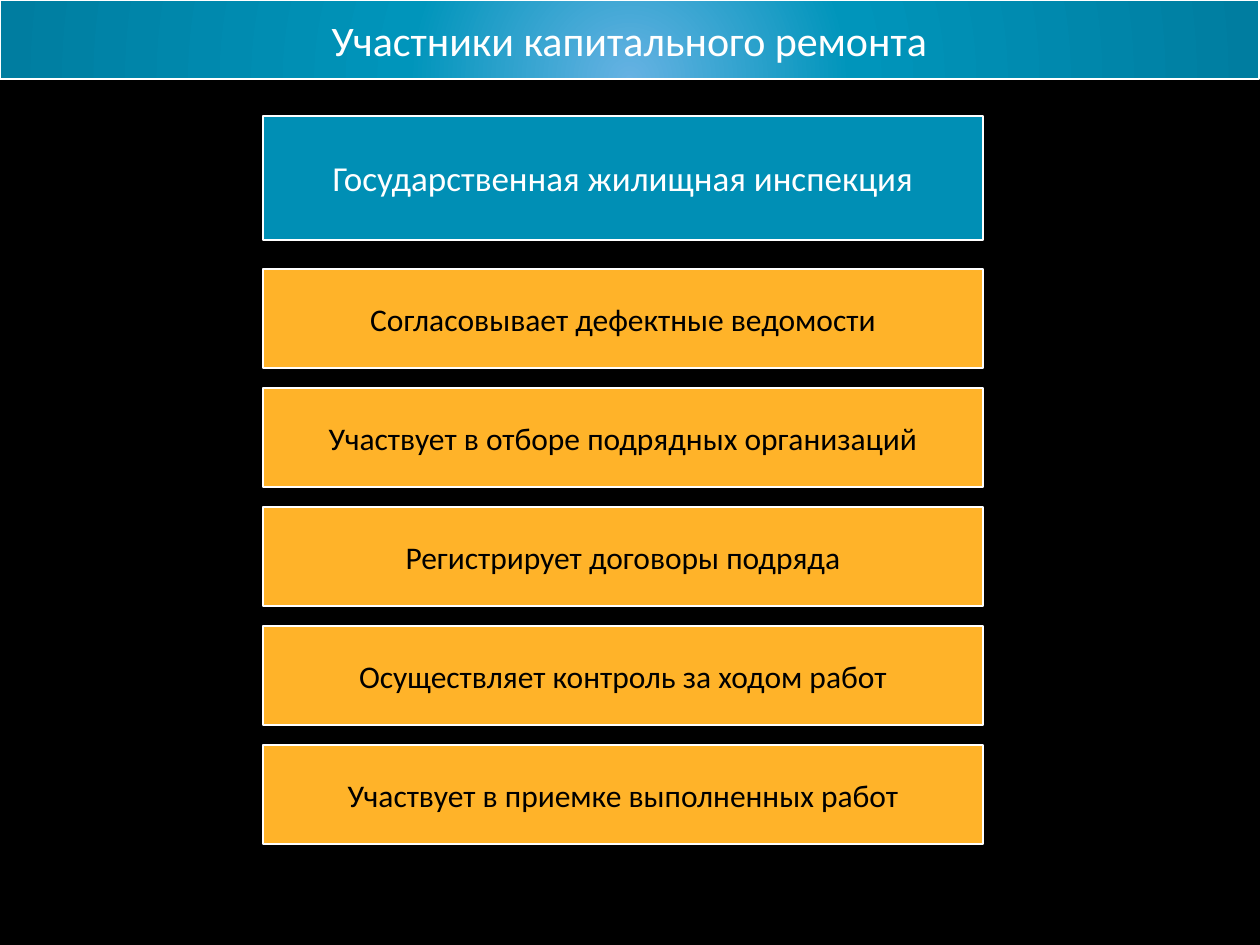
from pptx import Presentation, util as u
from pptx.dml.color import RGBColor
from pptx.enum import shapes, text
from pptx.oxml import parse_xml
from pptx.oxml.ns import nsdecls, qn

PX = 914400 / 126  # EMU per pixel


def px(n):
    return u.Emu(round(n * PX))


def rgb(value):
    return RGBColor.from_string(value)


def put_text(sp, content, size=18, color="000000", font="Calibri"):
    tf = sp.text_frame
    tf.word_wrap = True
    tf.auto_size = text.MSO_AUTO_SIZE.NONE
    tf.vertical_anchor = text.MSO_ANCHOR.MIDDLE
    p = tf.paragraphs[0]
    p.alignment = text.PP_ALIGN.CENTER
    r = p.add_run()
    r.text = content
    r.font.size = u.Pt(size)
    r.font.name = font
    r.font.color.rgb = rgb(color)


class Deck:
    WHITE, TEAL, AMBER = "FFFFFF", "008FB5", "FFB329"
    GLOW = [(0, "66B2E3"), (35, "0095BB"), (100, "007DA0")]

    def __init__(self, prs):
        self.s = prs.slides.add_slide(prs.slide_layouts[5])
        fill = self.s.background.fill
        fill.solid()
        fill.fore_color.rgb = rgb("000000")

    def outline(self, sp):
        sp.shadow.inherit = False
        sp.line.color.rgb = rgb(self.WHITE)
        sp.line.width = u.Pt(0.75)

    def glow(self, sp):
        """Radial gradient spreading from the middle of the bottom edge."""
        stops = "".join(
            f'<a:gs pos="{pos * 1000}"><a:srgbClr val="{c}"/></a:gs>'
            for pos, c in self.GLOW)
        grad = parse_xml(
            f'<a:gradFill {nsdecls("a")} rotWithShape="1"><a:gsLst>{stops}</a:gsLst>'
            '<a:path path="circle"><a:fillToRect l="50000" t="100000" r="50000"/>'
            '</a:path></a:gradFill>')
        sp.fill.gradient()
        sp_pr = sp.element.spPr
        sp_pr.replace(sp_pr.find(qn("a:gradFill")), grad)

    def title(self, content, x, y, w, h):
        sp = self.s.shapes.title
        sp.left, sp.top, sp.width, sp.height = map(px, (x, y, w, h))
        self.glow(sp)
        self.outline(sp)
        put_text(sp, content, size=24, color=self.WHITE)

    def box(self, content, x, y, w, h, fill, **fmt):
        sp = self.s.shapes.add_shape(
            shapes.MSO_SHAPE.RECTANGLE, *map(px, (x, y, w, h)))
        sp.fill.solid()
        sp.fill.fore_color.rgb = rgb(fill)
        self.outline(sp)
        put_text(sp, content, **fmt)


def main():
    prs = Presentation()
    prs.slide_width, prs.slide_height = u.Inches(10), u.Inches(7.5)
    deck = Deck(prs)

    # Title band
    deck.title("Участники капитального ремонта", 0, 0, 1259, 79)

    # Participant
    left, width = 263, 720
    deck.box("Государственная жилищная инспекция", left, 116, width, 124,
             deck.TEAL, size=20, color=deck.WHITE)

    # Duties, evenly stacked
    duties = [
        "Согласовывает дефектные ведомости",
        "Участвует в отборе подрядных организаций",
        "Регистрирует договоры подряда",
        "Осуществляет контроль за ходом работ",
        "Участвует в приемке выполненных работ",
    ]
    top, height, gap = 269, 99, 20
    for i, duty in enumerate(duties):
        deck.box(duty, left, top + i * (height + gap), width, height, deck.AMBER)

    prs.save("out.pptx")


if __name__ == "__main__":
    main()
